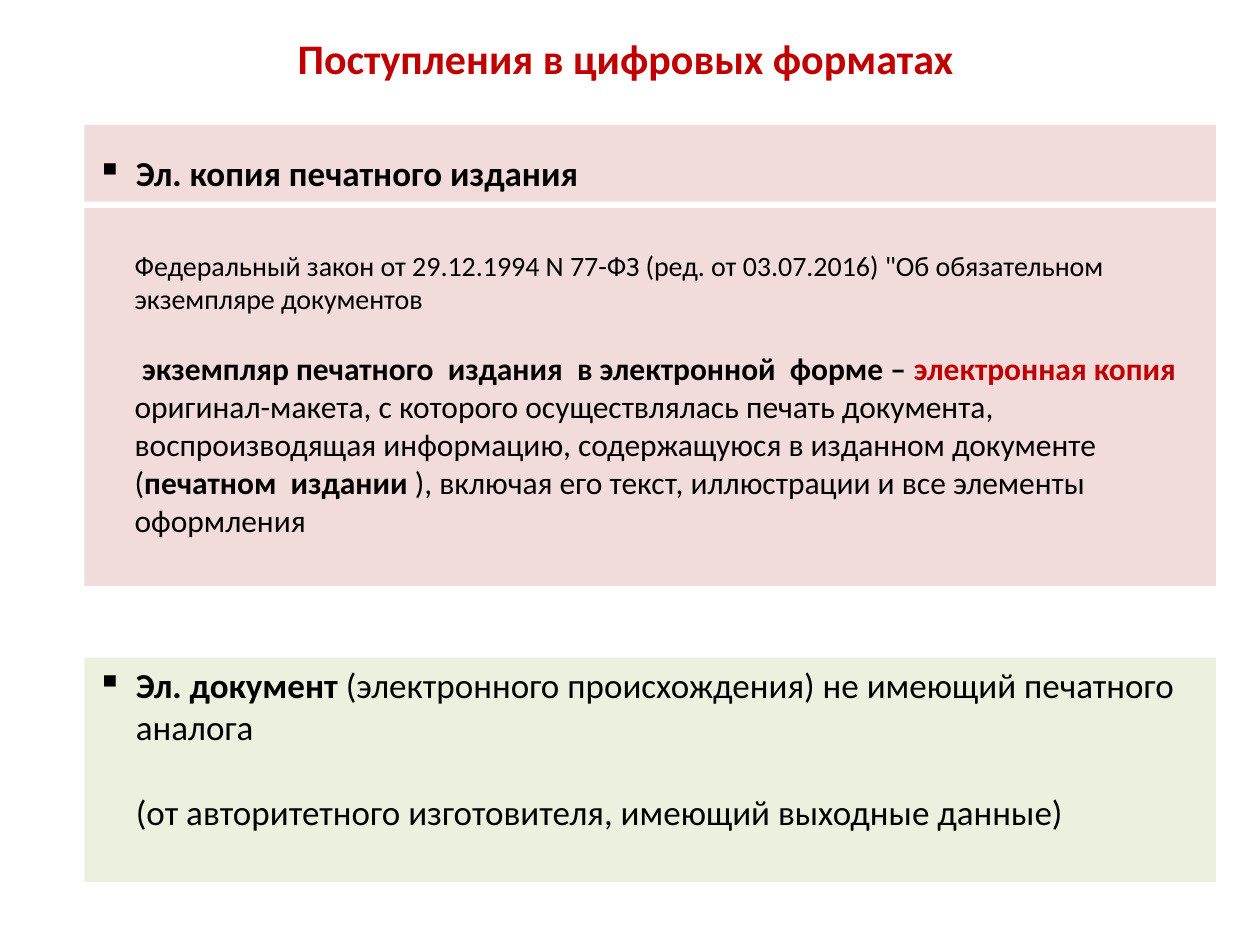
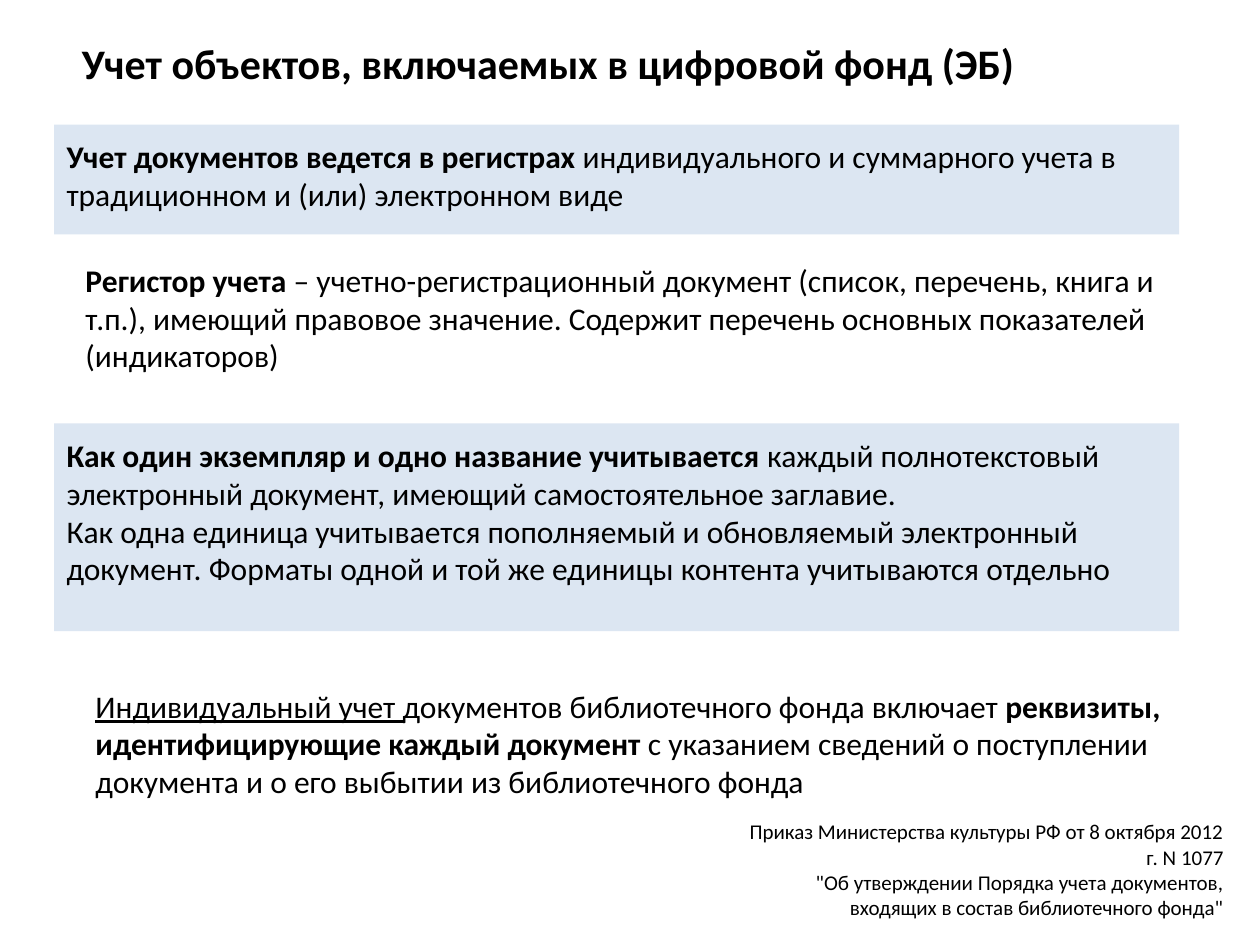
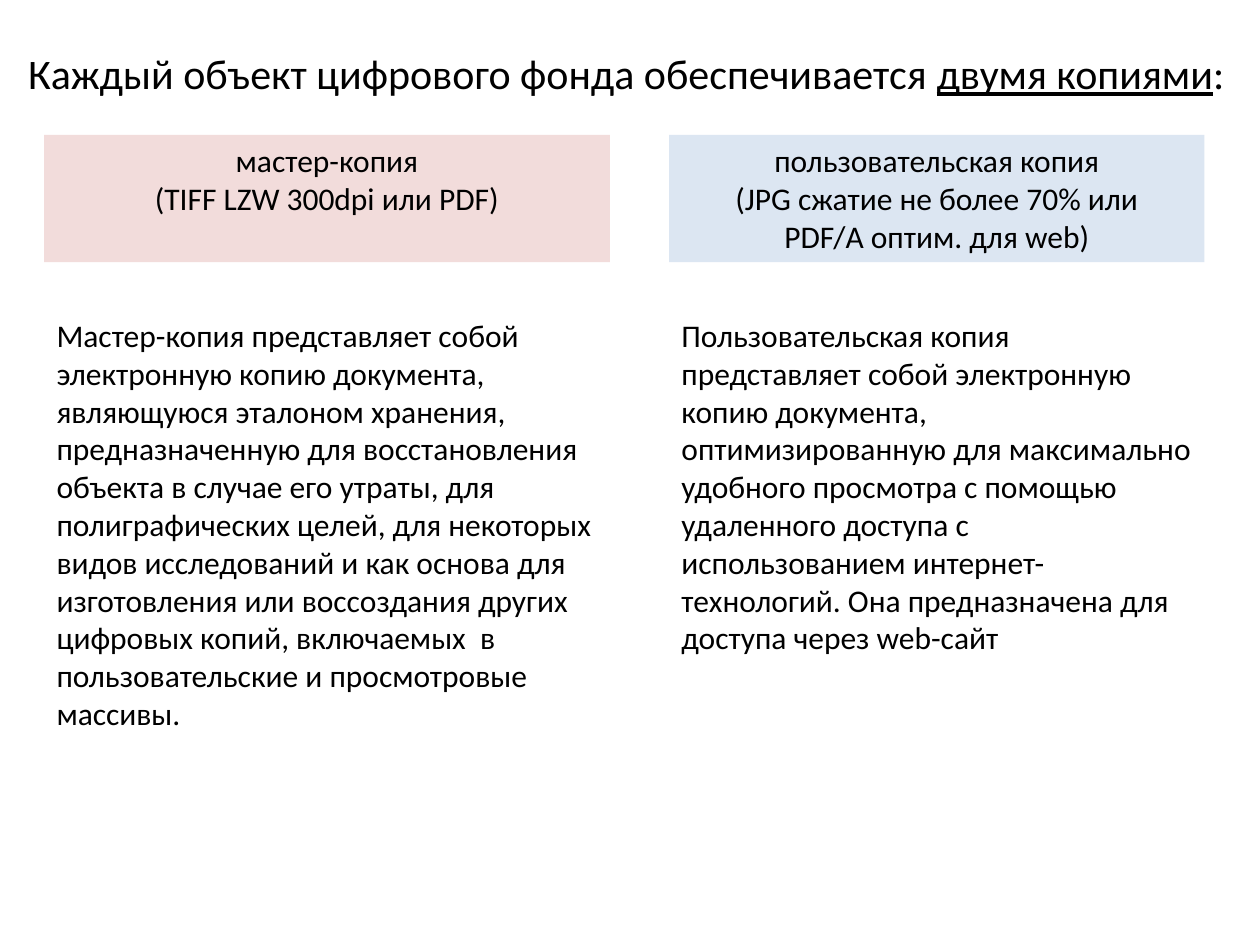
from pptx import Presentation
from pptx.dml.color import RGBColor
from pptx.enum.shapes import MSO_SHAPE
from pptx.enum.text import MSO_ANCHOR, MSO_AUTO_SIZE, PP_ALIGN as ALIGN
from pptx.oxml.ns import qn
from pptx.util import Inches, Pt
from lxml.etree import SubElement

FONT = "Calibri"
TITLE_SIZE = 24
COLORS = {"text": "000000", "accent": "C00000", "rose": "F2DCDB",
          "green": "EBF1DE", "blue": "DCE6F2"}

# Content: a span is (text, marks), where b is bold, u underlined, a accent colour.
# A paragraph is a list of spans; a block is (place, fill, paragraphs, format).
BULLET = {"margin": 0.31, "indent": -0.31, "bullet": "▪"}
LEFT, RIGHT = (0.35, 4.49), (5.31, 4.25)  # columns of the two copies: left, width

SLIDES = [
    {
        "title": ([("Поступления в цифровых форматах", "ba")],
                  (1.46, 0.21, 7.01, 0.5), ALIGN.CENTER),
        "blocks": [
            ((0.67, 0.99, 8.98, 0.61), "rose",
             [([("Эл. копия печатного издания", "b")], {**BULLET, "spacing": 1.5})],
             {"size": 20}),
            ((0.67, 1.65, 8.98, 3), "rose", [
                ([("Федеральный закон от 29.12.1994 N 77-ФЗ (ред. от 03.07.2016) "
                   "\"Об обязательном экземпляре документов", "")],
                 {"margin": 0.3, "size": 16}),
                ([("экземпляр печатного  издания  в электронной  форме – ", "b"),
                  ("электронная копия ", "ba"),
                  ("оригинал-макета, с которого осуществлялась печать документа, "
                   "воспроизводящая информацию, содержащуюся в изданном документе (", ""),
                  ("печатном  издании", "b"),
                  (" ), включая его текст, иллюстрации и все элементы оформления", "")],
                 {"margin": 0.3, "indent": 0.06, "before": 19.5}),
            ], {"top": 0.32}),
            ((0.67, 5.22, 8.98, 1.78), "green", [
                ([("Эл. документ", "b"),
                  (" (электронного происхождения) не имеющий печатного аналога", "")],
                 BULLET),
                ([("(от авторитетного изготовителя, имеющий выходные данные)", "")],
                 {"margin": 0.31, "before": 24.4}),
            ], {"size": 20}),
        ],
    },
    {
        "title": ([("Учет объектов, включаемых в цифровой фонд (ЭБ)", "b")],
                  (0.55, 0.19, 7.97, 0.62), ALIGN.LEFT),
        "blocks": [
            ((0.43, 0.99, 8.93, 0.87), "blue", [
                ([("Учет документов ведется в регистрах ", "b"),
                  ("индивидуального и суммарного учета в традиционном "
                   "и (или) электронном виде", "")], {}),
            ], {"top": 0.1}),
            ((0.58, 2.02, 8.78, 1.01), None, [
                ([("Регистор учета ", "b"),
                  ("– учетно-регистрационный документ (список, перечень, книга и т.п.), "
                   "имеющий правовое значение. Содержит перечень основных показателей "
                   "(индикаторов)", "")], {}),
            ], {}),
            ((0.43, 3.36, 8.93, 1.65), "blue", [
                ([("Как один экземпляр и одно название учитывается ", "b"),
                  ("каждый полнотекстовый электронный документ, имеющий "
                   "самостоятельное заглавие.", "")], {}),
                ([("Как одна единица учитывается пополняемый и обновляемый электронный "
                   "документ. Форматы одной и той же единицы контента учитываются "
                   "отдельно", "")], {}),
            ], {"top": 0.1}),
            ((0.66, 5.4, 8.7, 1.01), None, [
                ([("Индивидуальный учет ", "u"),
                  ("документов библиотечного фонда включает ", ""),
                  ("реквизиты, идентифицирующие каждый документ", "b"),
                  (" с указанием сведений о поступлении документа и о его выбытии "
                   "из библиотечного фонда", "")], {}),
            ], {}),
            ((5.79, 6.45, 4.02, 0.91), None, [
                ([("Приказ Министерства культуры РФ от 8 октября 2012 г. N 1077\n"
                   "\"Об утверждении Порядка учета документов, входящих в состав "
                   "библиотечного фонда\"", "")], {}),
            ], {"size": 12, "align": ALIGN.RIGHT}),
        ],
    },
    {
        "title": ([("Каждый объект цифрового фонда обеспечивается ", ""),
                   ("двумя копиями", "u"), (":", "")],
                  (-0.03, 0.33, 10, 0.5), ALIGN.CENTER),
        "blocks": [
            block
            for (left, width), fill, heading, description in [
                (LEFT, "rose", "мастер-копия\n(TIFF LZW 300dpi или PDF)",
                 "Мастер-копия представляет собой электронную копию документа, "
                 "являющуюся эталоном хранения, предназначенную для восстановления "
                 "объекта в случае его утраты, для полиграфических целей, для некоторых "
                 "видов исследований и как основа для изготовления или воссоздания "
                 "других цифровых копий, включаемых  в пользовательские и просмотровые "
                 "массивы."),
                (RIGHT, "blue", "пользовательская копия\n"
                 "(JPG сжатие не более 70% или\nPDF/А оптим. для web)",
                 "Пользовательская копия представляет собой электронную копию "
                 "документа, оптимизированную для максимально удобного просмотра "
                 "с помощью удаленного доступа с использованием интернет-технологий. "
                 "Она предназначена для доступа через web-сайт"),
            ]
            for block in [
                ((left, 1.07, width, 1.01), fill, [([(heading, "")], {})],
                 {"align": ALIGN.CENTER}),
                ((left, 2.46, width, 3.74), None, [([(description, "")], {})], {}),
            ]
        ],
    },
]


def color(name):
    return RGBColor.from_string(COLORS[name])


def prepare_frame(box, anchor, top=0.05):
    frame = box.text_frame
    frame.word_wrap = True
    frame.auto_size = MSO_AUTO_SIZE.NONE
    frame.vertical_anchor = anchor
    frame.margin_left = frame.margin_right = Inches(0.1)
    frame.margin_top, frame.margin_bottom = Inches(top), Inches(0.05)
    return frame


def write_paragraph(para, spans, size=18, align=ALIGN.LEFT, margin=0, indent=0,
                    bullet=None, spacing=1.0, before=0):
    para.alignment = align
    para.line_spacing = spacing
    para.space_before = Pt(before)
    para.font.name, para.font.size = FONT, Pt(size)
    para.font.color.rgb = color("text")
    for text, marks in spans:
        for number, line in enumerate(text.split("\n")):
            if number:
                para.add_line_break()
            span = para.add_run()
            span.text = line
            span.font.bold = "b" in marks
            span.font.underline = "u" in marks
            if "a" in marks:
                span.font.color.rgb = color("accent")

    # Indents and bullets
    props = para._p.get_or_add_pPr()
    props.set("marL", str(Inches(margin)))
    props.set("indent", str(Inches(indent)))
    if bullet:
        mark = SubElement(props, qn("a:buChar"))
        mark.set("char", bullet)
        props.find(qn("a:defRPr")).addprevious(mark)


def add_title(page, spans, place, align):
    title = page.shapes.title
    title.left, title.top, title.width, title.height = map(Inches, place)
    frame = prepare_frame(title, MSO_ANCHOR.MIDDLE)
    write_paragraph(frame.paragraphs[0], spans, TITLE_SIZE, align)


def add_block(page, place, fill, paragraphs, size=18, align=ALIGN.LEFT, top=0.05):
    area = [Inches(length) for length in place]
    if fill:
        box = page.shapes.add_shape(MSO_SHAPE.RECTANGLE, *area)
        box.shadow.inherit = False
        box.fill.solid()
        box.fill.fore_color.rgb = color(fill)
        box.line.fill.background()
    else:
        box = page.shapes.add_textbox(*area)
    frame = prepare_frame(box, MSO_ANCHOR.TOP, top)
    for number, (spans, style) in enumerate(paragraphs):
        para = frame.add_paragraph() if number else frame.paragraphs[0]
        write_paragraph(para, spans, **{"size": size, "align": align, **style})


def main():
    deck = Presentation()
    deck.slide_width, deck.slide_height = Inches(10), Inches(7.5)
    title_only = deck.slide_layouts[5]
    for content in SLIDES:
        page = deck.slides.add_slide(title_only)
        add_title(page, *content["title"])
        for place, fill, paragraphs, style in content["blocks"]:
            add_block(page, place, fill, paragraphs, **style)
    deck.save("out.pptx")


if __name__ == "__main__":
    main()
